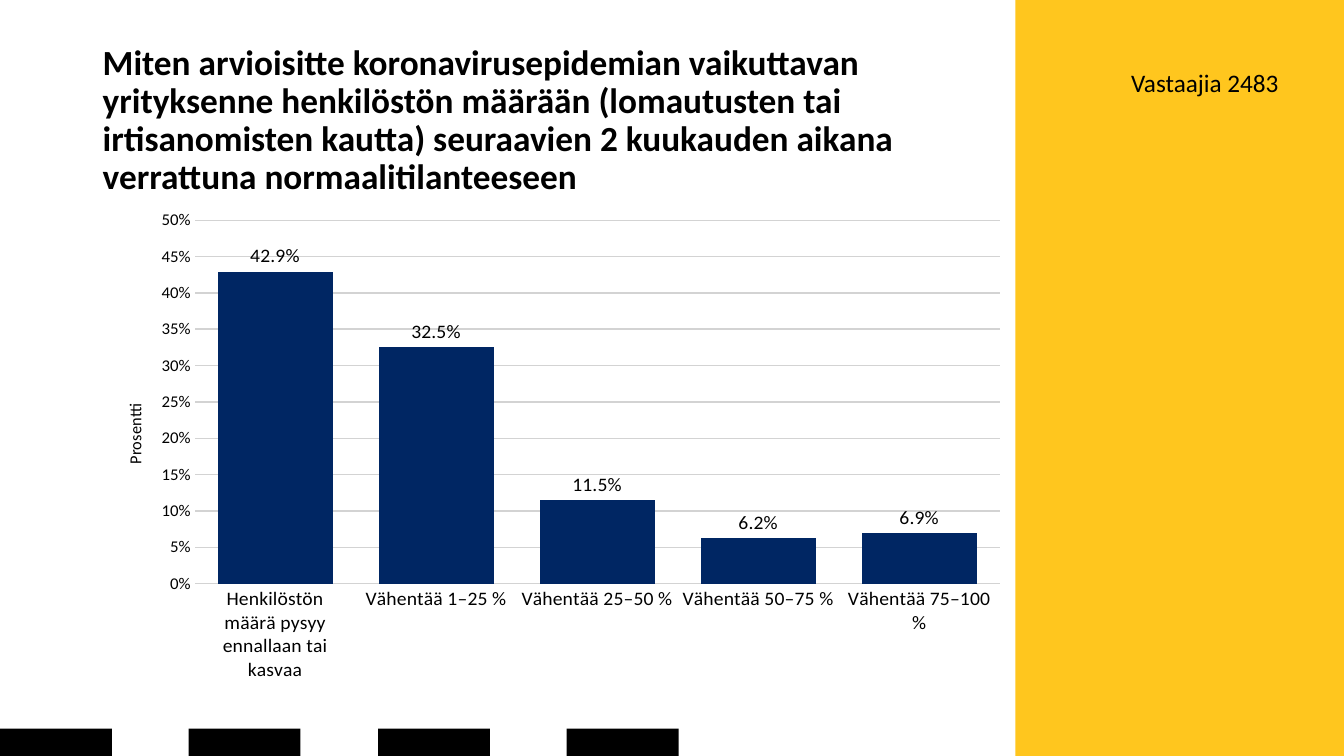
from dataclasses import dataclass

from lxml import etree
from pptx import Presentation
from pptx.chart.data import CategoryChartData
from pptx.dml.color import RGBColor
from pptx.enum.chart import XL_CHART_TYPE as ChartType
from pptx.enum.chart import XL_LABEL_POSITION as LabelPosition
from pptx.enum.chart import XL_TICK_MARK as TickMark
from pptx.enum.shapes import MSO_SHAPE as Shape
from pptx.enum.text import MSO_ANCHOR as Anchor
from pptx.enum.text import PP_ALIGN as Align
from pptx.oxml.ns import qn
from pptx.util import Pt

PX = 9144  # 100 px to the inch
FONT = "Calibri"
COLORS = {
    "yellow": "FFC61E",
    "black": "000000",
    "navy": "002663",
    "grid": "D3D3D3",
}


@dataclass(frozen=True)
class Box:
    left: int
    top: int
    width: int
    height: int

    def emu(self) -> tuple[int, ...]:
        return tuple(v * PX for v in (self.left, self.top, self.width, self.height))


@dataclass(frozen=True)
class Label:
    text: str
    box: Box
    size: float
    bold: bool = False
    align: Align = Align.LEFT
    anchor: Anchor = Anchor.TOP
    line_spacing: float = 1.0


@dataclass(frozen=True)
class Answer:
    text: str
    share: float


SIDE_PANEL = Box(1007, 0, 326, 750)
FOOTER_BLOCKS = [Box(round(187.3 * i), 723, 111, 27) for i in range(4)]
CHART_BOX = Box(92, 200, 918, 476)
LABELS = [
    Label(
        "Miten arvioisitte koronavirusepidemian vaikuttavan yrityksenne "
        "henkilöstön määrään (lomautusten tai irtisanomisten kautta) "
        "seuraavien 2 kuukauden aikana verrattuna normaalitilanteeseen",
        Box(92, 40, 918, 160), 25.2, bold=True, anchor=Anchor.MIDDLE, line_spacing=0.9,
    ),
    Label("Vastaajia 2483", Box(1071, 62, 207, 40), 18, align=Align.RIGHT),
]
ANSWERS = [
    Answer("Henkilöstön määrä pysyy ennallaan tai kasvaa", 0.429),
    Answer("Vähentää 1–25 %", 0.325),
    Answer("Vähentää 25–50 %", 0.115),
    Answer("Vähentää 50–75 %", 0.062),
    Answer("Vähentää 75–100 %", 0.069),
]


def rgb(name: str) -> RGBColor:
    return RGBColor.from_string(COLORS[name])


def style_font(font, size: float, bold: bool = False) -> None:
    font.name = FONT
    font.size = Pt(size)
    font.bold = bold
    font.color.rgb = rgb("black")


def draw_block(slide, box: Box, color: str) -> None:
    block = slide.shapes.add_shape(Shape.RECTANGLE, *box.emu())
    block.shadow.inherit = False
    block.fill.solid()
    block.fill.fore_color.rgb = rgb(color)
    block.line.fill.background()


def draw_label(slide, label: Label) -> None:
    frame = slide.shapes.add_textbox(*label.box.emu()).text_frame
    frame.word_wrap = True
    frame.vertical_anchor = label.anchor
    paragraph = frame.paragraphs[0]
    paragraph.alignment = label.align
    paragraph.line_spacing = label.line_spacing
    run = paragraph.add_run()
    run.text = label.text
    style_font(run.font, label.size, label.bold)


def place_manually(parent, index: int, **settings: float | str) -> None:
    """Give a chart part a fixed layout, in fractions of the chart area."""
    for old in parent.findall(qn("c:layout")):
        parent.remove(old)
    layout = etree.Element(qn("c:layout"))
    manual = etree.SubElement(layout, qn("c:manualLayout"))
    for tag, value in settings.items():
        etree.SubElement(manual, qn(f"c:{tag}")).set("val", str(value))
    parent.insert(index, layout)


def style_value_axis(axis) -> None:
    axis.minimum_scale, axis.maximum_scale, axis.major_unit = 0, 0.5, 0.05
    axis.major_tick_mark = TickMark.INSIDE
    axis.format.line.fill.background()
    axis.tick_labels.number_format = "0%"
    axis.tick_labels.number_format_is_linked = False
    style_font(axis.tick_labels.font, 12)
    gridline = axis.major_gridlines.format.line
    gridline.color.rgb = rgb("grid")
    gridline.width = Pt(1)

    frame = axis.axis_title.text_frame
    run = frame.paragraphs[0].add_run()
    run.text = "Prosentti"
    style_font(run.font, 12)
    title = axis.axis_title.element
    body = title.find(f".//{qn('a:bodyPr')}")
    body.set("rot", "-5400000")
    body.set("vert", "horz")
    place_manually(title, 1, xMode="edge", yMode="edge", x=0.03, y=0.43)


def draw_chart(slide) -> None:
    data = CategoryChartData(number_format="0.0%")
    data.categories = [answer.text for answer in ANSWERS]
    data.add_series("Series 1", [answer.share for answer in ANSWERS])
    chart = slide.shapes.add_chart(
        ChartType.COLUMN_CLUSTERED, *CHART_BOX.emu(), data
    ).chart
    chart.has_title = False
    chart.has_legend = False
    style_font(chart.font, 11)

    answers_axis = chart.category_axis
    answers_axis.major_tick_mark = TickMark.INSIDE
    answers_axis.format.line.fill.background()
    style_font(answers_axis.tick_labels.font, 14)
    style_value_axis(chart.value_axis)

    plot = chart.plots[0]
    plot.gap_width = 40
    plot.vary_by_categories = False
    shares = plot.series[0]
    shares.format.fill.solid()
    shares.format.fill.fore_color.rgb = rgb("navy")
    share_labels = shares.data_labels
    share_labels.show_value = True
    share_labels.position = LabelPosition.OUTSIDE_END
    share_labels.number_format = "0.0%"
    share_labels.number_format_is_linked = False
    style_font(share_labels.font, 14)

    place_manually(
        chart.element.find(f".//{qn('c:plotArea')}"), 0, layoutTarget="inner",
        xMode="edge", yMode="edge", x=0.11, y=0.04, w=0.87, h=0.78,
    )


def main() -> None:
    deck = Presentation()
    deck.slide_width, deck.slide_height = 1333 * PX, 750 * PX
    slide = deck.slides.add_slide(deck.slide_layouts[6])
    draw_block(slide, SIDE_PANEL, "yellow")
    for box in FOOTER_BLOCKS:
        draw_block(slide, box, "black")
    for label in LABELS:
        draw_label(slide, label)
    draw_chart(slide)
    deck.save("out.pptx")


if __name__ == "__main__":
    main()
